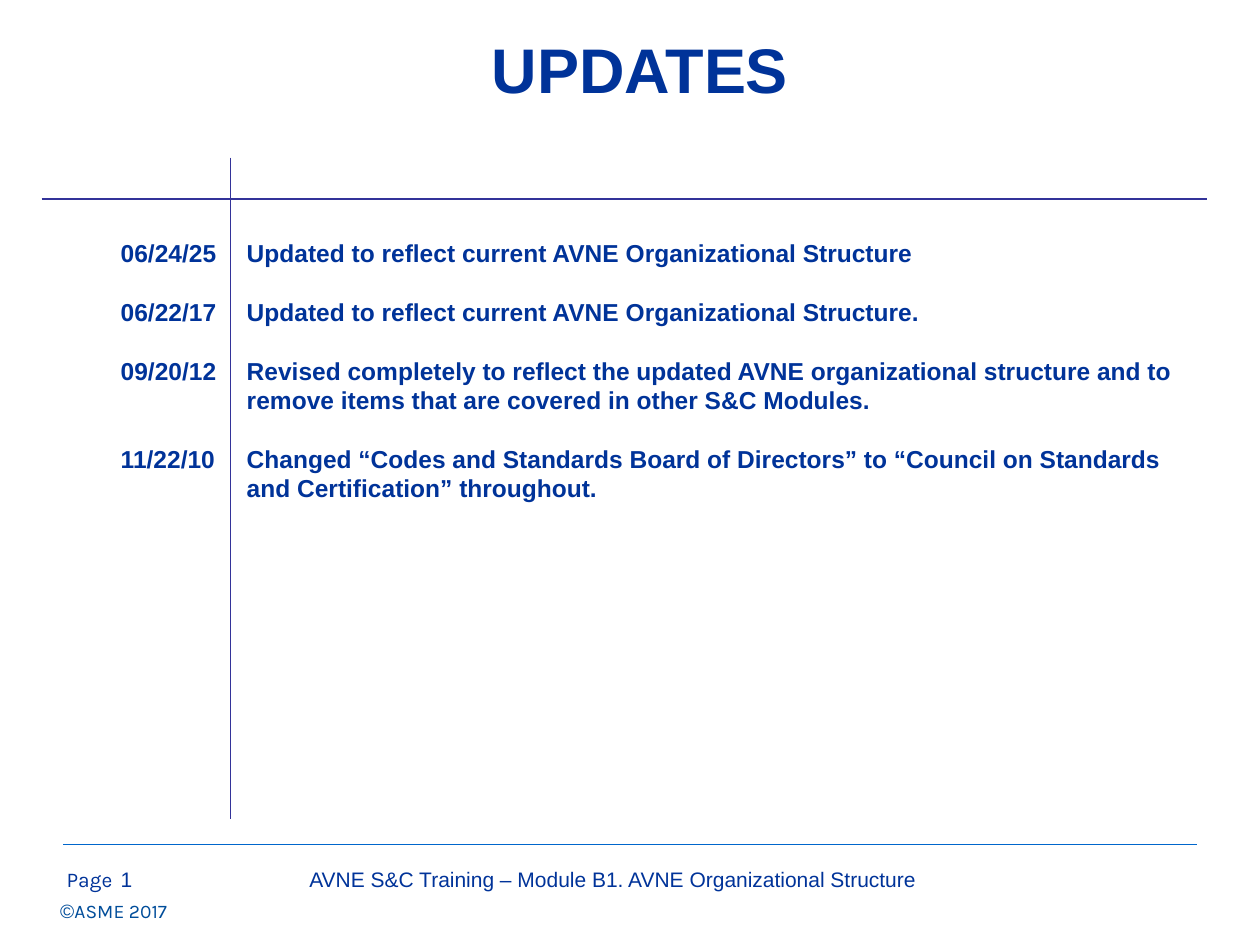
from pptx import Presentation
from pptx.dml.color import RGBColor
from pptx.enum.shapes import MSO_CONNECTOR
from pptx.enum.text import MSO_ANCHOR, PP_ALIGN
from pptx.oxml.ns import qn
from pptx.util import Inches, Pt
from lxml import etree

STRAIGHT = MSO_CONNECTOR.STRAIGHT
LEFT, CENTER = PP_ALIGN.LEFT, PP_ALIGN.CENTER
TOP, MIDDLE = MSO_ANCHOR.TOP, MSO_ANCHOR.MIDDLE

WIDTH, HEIGHT = 10, 7.5
NAVY, INDIGO, BLUE, COPYRIGHT_BLUE = "003399", "333399", "0066CC", "004D9A"
LINE_HEIGHT = 16.8
DATE_COLUMN = 1

UPDATES = [
    ("06/24/25", "Updated to reflect current AVNE Organizational Structure"),
    ("06/22/17", "Updated to reflect current AVNE Organizational Structure."),
    ("09/20/12", "Revised completely to reflect the updated AVNE organizational "
                 "structure and to remove items that are covered in other S&C Modules."),
    ("11/22/10", "Changed “Codes and Standards Board of Directors” to “Council on "
                 "Standards and Certification” throughout."),
]


def color(value):
    return RGBColor.from_string(value)


def style(font, size, shade=NAVY, name="Arial", bold=False):
    font.size, font.name, font.bold = Pt(size), name, bold
    font.color.rgb = color(shade)


def add_box(page, box, anchor=TOP, wrap=True):
    frame = page.shapes.add_textbox(*map(Inches, box)).text_frame
    frame.word_wrap = wrap
    frame.vertical_anchor = anchor
    return frame


def add_label(page, box, text, size, align=LEFT, anchor=TOP, **look):
    frame = add_box(page, box, anchor)
    frame.text = text
    para = frame.paragraphs[0]
    para.alignment = align
    style(para.runs[0].font, size, **look)


def add_rule(page, start, end, shade, weight):
    rule = page.shapes.add_connector(STRAIGHT, *map(Inches, start + end))
    rule.line.color.rgb = color(shade)
    rule.line.width = Pt(weight)
    etree.SubElement(rule._element.spPr, qn("a:effectLst"))


def add_cross(page, box, center):
    """Crossing rules that set off the date column."""
    left, top, width, height = box
    x, y = center
    add_rule(page, (x, top), (x, top + height), INDIGO, 1)
    add_rule(page, (left, y), (left + width, y), INDIGO, 1)


def add_updates(page, box):
    """Dated entries with a hanging indent, one blank line's height apart."""
    frame = add_box(page, box)
    for index, entry in enumerate(UPDATES):
        para = frame.paragraphs[0] if index == 0 else frame.add_paragraph()
        para.text = "\t".join(entry)
        properties = para._p.get_or_add_pPr()
        properties.set("marL", str(Inches(DATE_COLUMN)))
        properties.set("indent", str(-Inches(DATE_COLUMN)))
        para.line_spacing = Pt(LINE_HEIGHT)
        para.space_before = Pt(LINE_HEIGHT if index else 0)
        for span in para.runs:
            style(span.font, 14, bold=True)


def add_footer(page, box):
    left, top, width, height = box
    text_top = top + 0.13
    add_rule(page, (left, top), (left + width, top), BLUE, 0.75)

    # Page number and module title
    add_label(page, (left - 0.07, text_top, 0.6, 0.52), "Page", 12, name="Karla")
    add_label(page, (left + 0.36, text_top, 0.47, 0.52), "1", 12)
    add_label(page, (left + 1.03, text_top, 6.67, 0.52),
              "AVNE S&C Training – Module B1. AVNE Organizational Structure",
              12, align=CENTER)

    # Copyright line
    frame = add_box(page, (left - 0.12, text_top + 0.26, 1.1, 0.29), wrap=False)
    for text, name in (("©", "Arial"), ("ASME 2017", "Karla")):
        span = frame.paragraphs[0].add_run()
        span.text = text
        style(span.font, 11, COPYRIGHT_BLUE, name)


def main():
    deck = Presentation()
    deck.slide_width, deck.slide_height = Inches(WIDTH), Inches(HEIGHT)
    page = deck.slides.add_slide(deck.slide_layouts[6])

    add_footer(page, (0.05 * WIDTH, 6.7, 0.9 * WIDTH, 0.8))
    add_label(page, (0.58, 0.1, 0.9 * WIDTH, 0.88), "UPDATES", 36,
              align=CENTER, anchor=MIDDLE, bold=True)
    add_cross(page, (0.33, 1.25, 9.25, 5.25), center=(1.83, 1.58))
    add_updates(page, (0.86, 1.84, 8.58, 4.77))

    deck.save("out.pptx")


if __name__ == "__main__":
    main()
